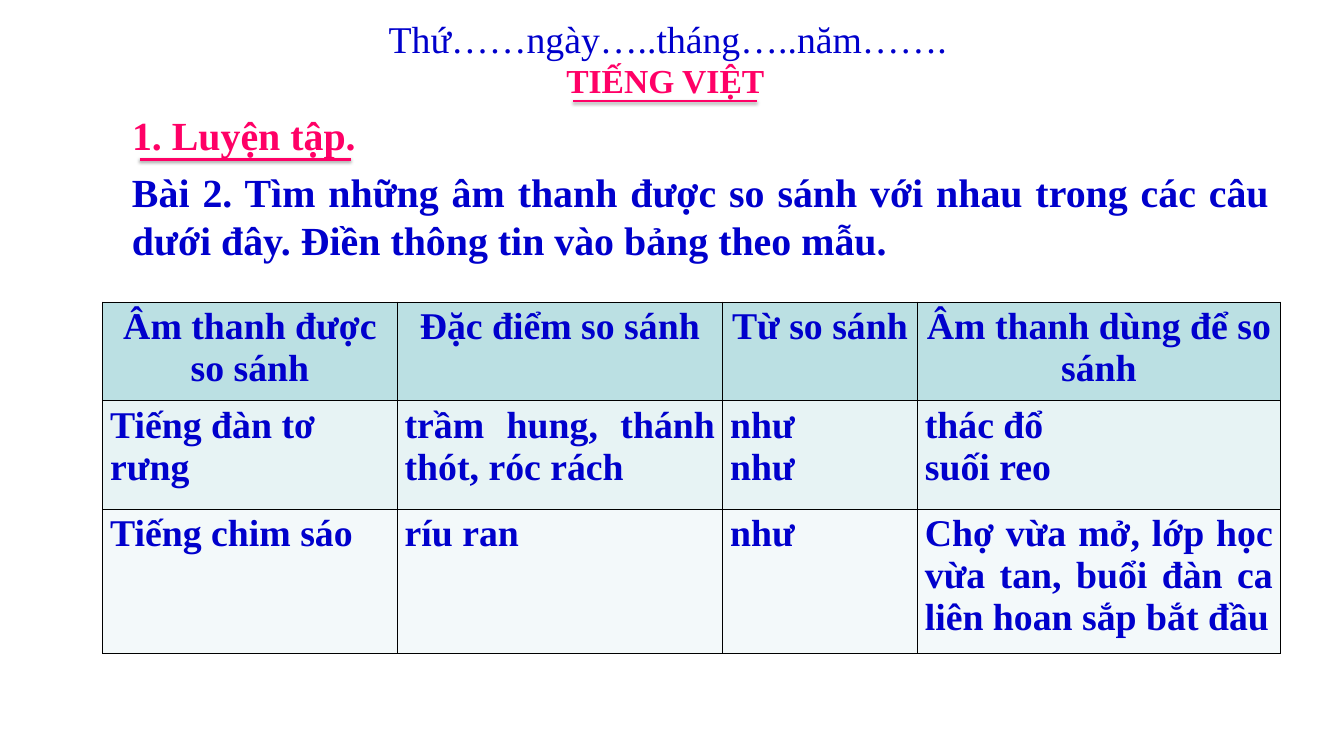
from lxml.etree import SubElement
from pptx import Presentation
from pptx.dml.color import RGBColor
from pptx.enum.shapes import MSO_CONNECTOR
from pptx.enum.text import MSO_ANCHOR, MSO_AUTO_SIZE, PP_ALIGN
from pptx.oxml.ns import qn
from pptx.util import Inches, Pt

FONT = "Times New Roman"
BLUE = RGBColor(0x00, 0x00, 0xCC)
PINK = RGBColor(0xFF, 0x00, 0x66)
ROW_FILLS = [
    RGBColor(0xBB, 0xE0, 0xE3),
    RGBColor(0xE7, 0xF3, 0xF4),
    RGBColor(0xF3, 0xF9, 0xFA),
]
LEFT, CENTER, JUSTIFY = PP_ALIGN.LEFT, PP_ALIGN.CENTER, PP_ALIGN.JUSTIFY

COLUMN_WIDTHS = [3.9, 4.31, 2.58, 4.81]
ROW_HEIGHTS = [1.31, 1.44, 1.91]
ROWS = [
    ["Âm thanh được so sánh", "Đặc điểm so sánh", "Từ so sánh", "Âm thanh dùng để so sánh"],
    ["Tiếng đàn tơ rưng", "trầm hung, thánh thót, róc rách", "như\nnhư", "thác đổ\nsuối reo"],
    ["Tiếng chim sáo", "ríu ran", "như",
     "Chợ vừa mở, lớp học vừa tan, buổi đàn ca liên hoan sắp bắt đầu"],
]
JUSTIFIED_CELLS = {(1, 1), (2, 3)}


def write_text(frame, text, size, color, bold=True, align=LEFT):
    frame.text = text
    for para in frame.paragraphs:
        para.alignment = align
        for span in para.runs:
            font = span.font
            font.name, font.size, font.bold = FONT, Pt(size), bold
            font.color.rgb = color


def place_text(box, place, text, size, color, bold=True, align=LEFT, wrap=True):
    box.left, box.top, box.width, box.height = map(Inches, place)
    frame = box.text_frame
    write_text(frame, text, size, color, bold, align)
    frame.word_wrap = wrap
    frame.auto_size = MSO_AUTO_SIZE.NONE
    frame.vertical_anchor = MSO_ANCHOR.TOP


def add_text(slide, place, *args, **options):
    box = slide.shapes.add_textbox(*map(Inches, place))
    place_text(box, place, *args, **options)


def add_underline(slide, left, right, top, width, distance, opacity):
    """Draw a pink rule with a soft shadow falling straight down."""
    line = slide.shapes.add_connector(
        MSO_CONNECTOR.STRAIGHT, Inches(left), Inches(top), Inches(right), Inches(top))
    line.line.color.rgb = PINK
    line.line.width = Pt(width)
    effects = SubElement(line._element.spPr, qn("a:effectLst"))
    shadow = SubElement(effects, qn("a:outerShdw"), blurRad=str(Pt(3.1)),
                        dist=str(Pt(distance)), dir="5400000", rotWithShape="0")
    color = SubElement(shadow, qn("a:srgbClr"), val="000000")
    SubElement(color, qn("a:alpha"), val=str(opacity * 1000))


def add_borders(cell):
    properties = cell._tc.get_or_add_tcPr()
    for position, side in enumerate(("lnL", "lnR", "lnT", "lnB")):
        border = properties.makeelement(qn(f"a:{side}"), {"w": str(Pt(1))})
        fill = SubElement(border, qn("a:solidFill"))
        SubElement(fill, qn("a:srgbClr"), val="000000")
        properties.insert(position, border)


def add_comparison_table(slide):
    table = slide.shapes.add_table(
        len(ROWS), len(COLUMN_WIDTHS), Inches(1.36), Inches(4),
        Inches(sum(COLUMN_WIDTHS)), Inches(sum(ROW_HEIGHTS))).table
    for column, width in zip(table.columns, COLUMN_WIDTHS):
        column.width = Inches(width)
    for row, height in zip(table.rows, ROW_HEIGHTS):
        row.height = Inches(height)
    for r, texts in enumerate(ROWS):
        for c, text in enumerate(texts):
            cell = table.cell(r, c)
            cell.fill.solid()
            cell.fill.fore_color.rgb = ROW_FILLS[r]
            add_borders(cell)
            align = CENTER if r == 0 else JUSTIFY if (r, c) in JUSTIFIED_CELLS else LEFT
            write_text(cell.text_frame, text, 36, BLUE, align=align)


def main():
    deck = Presentation()
    deck.slide_width, deck.slide_height = Inches(17.8), Inches(10)
    slide = deck.slides.add_slide(deck.slide_layouts[5])

    add_text(slide, (5.05, 0.16, 7.67, 0.71), "Thứ……ngày…..tháng…..năm…….",
             36, BLUE, bold=False, wrap=False)
    place_text(slide.shapes.title, (7.4, 0.75, 2.85, 0.64), "TIẾNG VIỆT",
               32, PINK, wrap=False)
    add_underline(slide, 7.59, 10.03, 1.34, width=2, distance=1.6, opacity=38)

    add_text(slide, (1.65, 1.42, 4.58, 0.74), "1. Luyện tập.", 38, PINK)
    add_underline(slide, 1.85, 4.65, 2.11, width=3, distance=1.8, opacity=35)
    add_text(slide, (1.65, 2.17, 15.27, 1.38),
             "Bài 2. Tìm những âm thanh được so sánh với nhau trong các câu "
             "dưới đây. Điền thông tin vào bảng theo mẫu.",
             38, BLUE, align=JUSTIFY)
    add_comparison_table(slide)

    deck.save("out.pptx")


if __name__ == "__main__":
    main()
